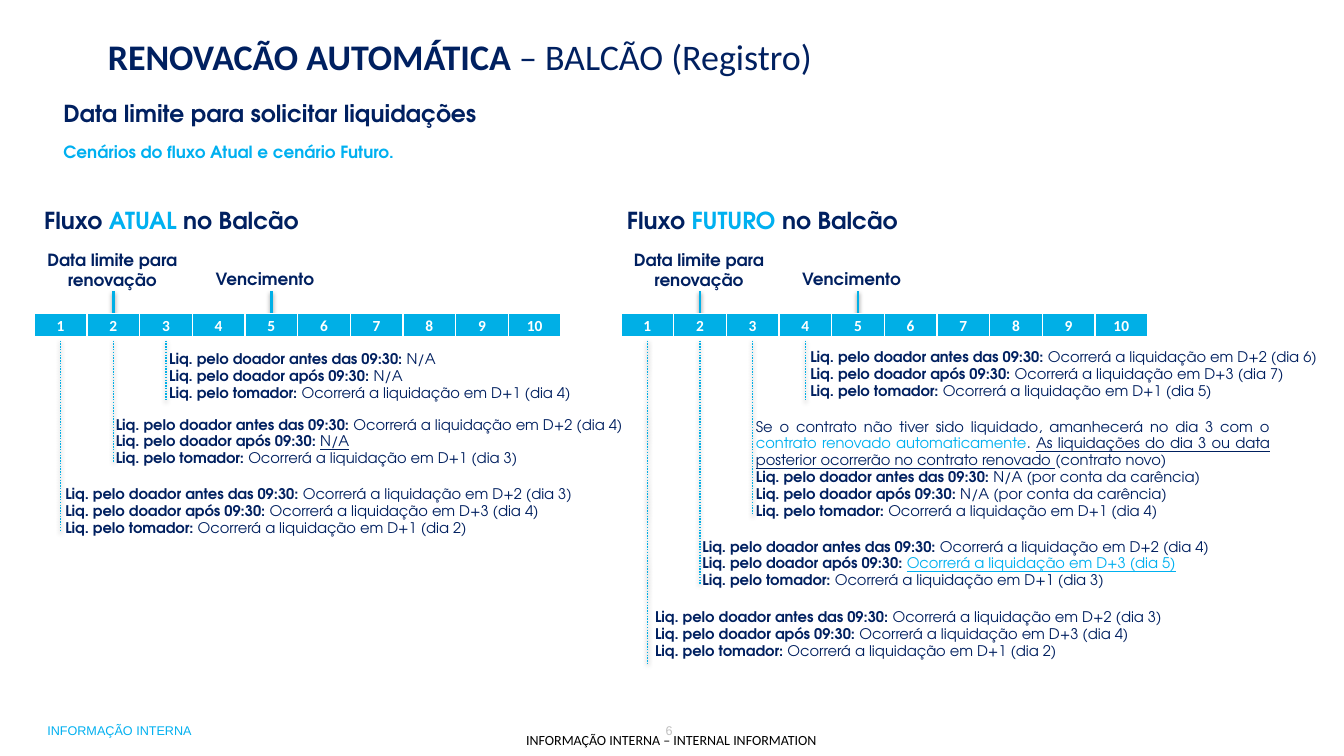
"""Build the slide that compares the current and future renewal flows."""
from dataclasses import dataclass
from typing import NamedTuple

import lxml.etree
import pptx
import pptx.dml.color
import pptx.enum.dml
import pptx.enum.shapes
import pptx.enum.text
import pptx.oxml
import pptx.oxml.ns
import pptx.util

ALIGN = pptx.enum.text.PP_ALIGN
NAVY, SKY, CYAN, WHITE = "002060", "00B0F0", "00AFE6", "FFFFFF"
DISPLAY, BODY = "TeX Gyre Adventor", "Calibri"
SLIDE_WIDTH, SLIDE_HEIGHT = pptx.util.Inches(13.33), pptx.util.Inches(7.5)
GRID = 100
DAYS, DAY_WIDTH = 10, 3.92
MARKER_TOP, MARKER_BOTTOM = 38.53, 42.13
TABLE_TOP, TABLE_HEIGHT, GUIDE_TOP = 41.47, 3.2, 45.07
DEADLINE_DAY, MATURITY_DAY = 2, 5
QUESTIONS = ("Liq. pelo doador antes das 09:30: ", "Liq. pelo doador após 09:30: ", "Liq. pelo tomador: ")


class Box(NamedTuple):
    """Left and width in grid columns, top and height in grid rows."""
    left: float
    top: float
    width: float
    height: float


class Run(NamedTuple):
    """A stretch of text with its own emphasis."""
    text: str
    bold: bool = False
    color: str = NAVY
    underline: bool = False


@dataclass
class Note:
    """Answers for one day, hung on a dotted guide."""
    day: int
    box: Box
    guide_bottom: float
    answers: tuple[Run, Run, Run]
    preamble: tuple[Run, ...] = ()


@dataclass
class Flow:
    """One timeline with its heading and notes."""
    name: str
    left: float
    heading_left: float
    notes: list[Note]


def column(value: float) -> int:
    """Turn grid columns into a length."""
    return round(SLIDE_WIDTH * value / GRID)


def row(value: float) -> int:
    """Turn grid rows into a length."""
    return round(SLIDE_HEIGHT * value / GRID)


def rgb(value: str) -> pptx.dml.color.RGBColor:
    """Turn a hex string into a colour."""
    return pptx.dml.color.RGBColor.from_string(value)


def settled(delay: int, day: int, **emphasis) -> Run:
    """Word the answer for a settlement that takes place."""
    return Run(f"Ocorrerá a liquidação em D+{delay} (dia {day})", **emphasis)


def write(frame, paragraphs: list, *, size: float, font: str = DISPLAY, align=ALIGN.LEFT, spacing=None) -> None:
    """Fill a text frame with paragraphs made of runs."""
    for index, runs in enumerate(paragraphs):
        paragraph = frame.add_paragraph() if index else frame.paragraphs[0]
        paragraph.alignment = align
        paragraph.line_spacing = spacing
        for item in runs:
            run = paragraph.add_run()
            run.text = item.text
            run.font.name, run.font.size = font, pptx.util.Pt(size)
            run.font.bold, run.font.underline = item.bold, item.underline
            run.font.color.rgb = rgb(item.color)


def add_text(slide, box: Box, paragraphs: list, *, inset: bool = True, grow: bool = True, **style) -> None:
    """Place a wrapping text box on the grid."""
    shape = slide.shapes.add_textbox(column(box.left), row(box.top), column(box.width), row(box.height))
    frame = shape.text_frame
    frame.word_wrap = True
    sizes = pptx.enum.text.MSO_AUTO_SIZE
    frame.auto_size = sizes.SHAPE_TO_FIT_TEXT if grow else sizes.NONE
    if not inset:
        frame.margin_left = frame.margin_right = frame.margin_top = frame.margin_bottom = 0
    write(frame, paragraphs, **style)


def add_vertical(slide, x: float, top: float, bottom: float, *, width: float, dotted: bool = False) -> None:
    """Draw a vertical line with a soft shadow."""
    line = slide.shapes.add_connector(
        pptx.enum.shapes.MSO_CONNECTOR.STRAIGHT, column(x), row(top), column(x), row(bottom))
    line.line.color.rgb = rgb(CYAN)
    line.line.width = pptx.util.Pt(width)
    if dotted:
        line.line.dash_style = pptx.enum.dml.MSO_LINE.ROUND_DOT
    line._element.spPr.append(pptx.oxml.parse_xml(
        f'<a:effectLst {pptx.oxml.ns.nsdecls("a")}>'
        '<a:outerShdw blurRad="39370" dist="20320" dir="5400000" rotWithShape="0">'
        '<a:srgbClr val="000000"><a:alpha val="38000"/></a:srgbClr></a:outerShdw></a:effectLst>'))


def add_border(cell, side: str, width: float) -> None:
    """Give one side of a cell a white border."""
    properties = cell._tc.get_or_add_tcPr()
    border = lxml.etree.SubElement(
        properties, pptx.oxml.ns.qn(f"a:ln{side}"), w=str(pptx.util.Pt(width)))
    fill = lxml.etree.SubElement(border, pptx.oxml.ns.qn("a:solidFill"))
    lxml.etree.SubElement(fill, pptx.oxml.ns.qn("a:srgbClr"), val=WHITE)


def add_days(slide, left: float) -> None:
    """Draw the table of numbered days."""
    table = slide.shapes.add_table(
        1, DAYS, column(left), row(TABLE_TOP), column(DAYS * DAY_WIDTH), row(TABLE_HEIGHT)).table
    table.horz_banding = False
    for index, cell in enumerate(table.rows[0].cells):
        table.columns[index].width = column(DAY_WIDTH)
        for side, width in (("L", 1), ("R", 1), ("T", 1), ("B", 3)):
            add_border(cell, side, width)
        cell.fill.solid()
        cell.fill.fore_color.rgb = rgb(CYAN)
        cell.margin_top = cell.margin_bottom = pptx.util.Inches(0.03)
        write(cell.text_frame, [[Run(str(index + 1), True, WHITE)]], size=11, font=BODY, align=ALIGN.CENTER)


def add_flow(slide, flow: Flow) -> None:
    """Draw a heading, its timeline and the notes below."""
    def center(day: int) -> float:
        """Find the middle of a day's column."""
        return flow.left + (day - 0.5) * DAY_WIDTH

    heading = [Run("Fluxo ", True), Run(flow.name, True, SKY), Run(" no Balcão", True)]
    add_text(slide, Box(flow.heading_left, 26.67, 23.1, 5.07), [heading], size=16.7)
    add_text(slide, Box(flow.left - 1.5, 32.4, 14.62, 6.67), [[Run("Data limite para renovação", True)]],
             size=12, align=ALIGN.CENTER)
    add_text(slide, Box(flow.left + 12.75, 34.93, 9.68, 4), [[Run("Vencimento", True)]], size=12)
    for day in (DEADLINE_DAY, MATURITY_DAY):
        add_vertical(slide, center(day), MARKER_TOP, MARKER_BOTTOM, width=2)
    add_days(slide, flow.left)
    for note in flow.notes:
        add_vertical(slide, center(note.day), GUIDE_TOP, note.guide_bottom, width=1, dotted=True)
        answers = [[Run(question, True), answer] for question, answer in zip(QUESTIONS, note.answers)]
        add_text(slide, note.box, ([note.preamble] if note.preamble else []) + answers,
                 size=10.5, align=ALIGN.JUSTIFY, spacing=pptx.util.Pt(12))


NO_ANSWER = Run("N/A")
GRACE = Run("N/A (por conta da carência)")
RENEWED = (
    Run("Se o contrato não tiver sido liquidado, amanhecerá no dia 3 com o "),
    Run("contrato renovado automaticamente", color=SKY), Run(". "),
    Run("As liquidações do dia 3 ou data posterior ocorrerão no contrato renovado ", underline=True),
    Run("(contrato novo)"))
FIRST_DAY = (settled(2, 3), settled(3, 4), settled(1, 2))
FLOWS = [
    Flow("ATUAL", 2.55, 2.55, [
        Note(3, Box(11.85, 45.73, 35.92, 8.13), 53.07, (NO_ANSWER, NO_ANSWER, settled(1, 4))),
        Note(2, Box(7.88, 54.4, 39.9, 8.13), 61.07, (settled(2, 4), Run("N/A", underline=True), settled(1, 3))),
        Note(1, Box(4.12, 63.6, 42.6, 8.13), 70.4, FIRST_DAY)]),
    Flow("FUTURO", 46.2, 45.9, [
        Note(4, Box(59.55, 45.47, 39.75, 8.13), 53.07, (settled(2, 6), settled(3, 7), settled(1, 5))),
        Note(3, Box(55.5, 54.67, 39.75, 14.8), 68.13, (GRACE, GRACE, settled(1, 4)), RENEWED),
        Note(2, Box(51.52, 70.53, 43.65, 8.13), 77.33,
             (settled(2, 4), settled(3, 5, color=SKY, underline=True), settled(1, 3))),
        Note(1, Box(48, 79.87, 48.52, 8.13), 87.73, FIRST_DAY)]),
]


def main() -> None:
    """Build and save the presentation."""
    presentation = pptx.Presentation()
    presentation.slide_width, presentation.slide_height = SLIDE_WIDTH, SLIDE_HEIGHT
    slide = presentation.slides.add_slide(presentation.slide_layouts[6])
    add_text(slide, Box(2.78, 94.93, 28.35, 3.33), [[Run("INFORMAÇÃO INTERNA", color=SKY)]], size=9, font="Arial")
    add_text(slide, Box(35.62, 94.93, 28.35, 3.33), [[Run("6", color="BFBFBF")]],
             size=9, font="Arial", align=ALIGN.CENTER)
    add_text(slide, Box(39.15, 96.8, 22, 2.27),
             [[Run("INFORMAÇÃO INTERNA – INTERNAL INFORMATION", color="000000")]], inset=False, size=10, font=BODY)
    add_text(slide, Box(7.28, 4.53, 64.95, 6.8), [[Run("RENOVACÃO AUTOMÁTICA ", True), Run("– BALCÃO (Registro)")]],
             grow=False, size=25.7, font=BODY, spacing=0.9)
    add_text(slide, Box(3.98, 12.4, 67.12, 5.07), [[Run("Data limite para solicitar liquidações", True)]], size=16.7)
    add_text(slide, Box(3.98, 18.13, 67.12, 4), [[Run("Cenários do fluxo Atual e cenário Futuro.", True, SKY)]],
             size=12)
    for flow in FLOWS:
        add_flow(slide, flow)
    presentation.save("out.pptx")


if __name__ == "__main__":
    main()
